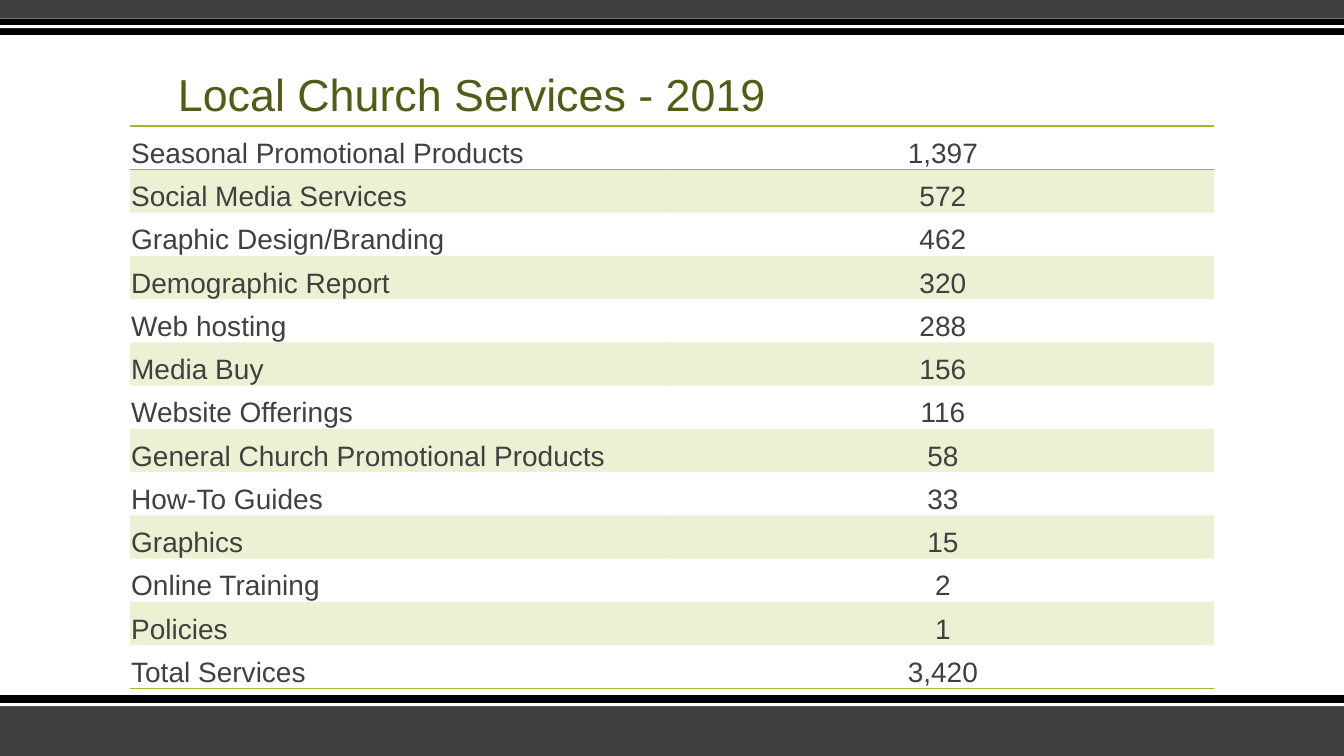
from dataclasses import dataclass

from lxml.etree import SubElement
from pptx import Presentation
from pptx.dml.color import RGBColor
from pptx.enum.shapes import MSO_SHAPE
from pptx.enum.text import MSO_ANCHOR, PP_ALIGN
from pptx.oxml.ns import qn
from pptx.util import Pt

TITLE = "Local Church Services - 2019"
SERVICES = [
    ("Seasonal Promotional Products", "1,397"),
    ("Social Media Services", "572"),
    ("Graphic Design/Branding", "462"),
    ("Demographic Report", "320"),
    ("Web hosting", "288"),
    ("Media Buy", "156"),
    ("Website Offerings", "116"),
    ("General Church Promotional Products", "58"),
    ("How-To Guides", "33"),
    ("Graphics", "15"),
    ("Online Training", "2"),
    ("Policies", "1"),
    ("Total Services", "3,420"),
]


@dataclass(frozen=True)
class Theme:
    font: str = "Arial"
    title_size: int = 32
    body_size: int = 20
    title: str = "535C14"
    body: str = "404040"
    accent: str = "A6B727"
    gray: str = "404040"
    black: str = "000000"
    white: str = "FFFFFF"


THEME = Theme()
WIDTH, HEIGHT = 960, 540
# top, height, colour, from back to front
BANDS = [
    (504, 36, THEME.gray),
    (496.5, 7.8, THEME.black),
    (502.3, 2.2, THEME.white),
    (0, 13.4, THEME.gray),
    (13.4, 11.6, THEME.black),
    (18, 2.2, THEME.white),
]
TABLE_LEFT, TABLE_TOP = 93, 90
COLUMN_WIDTH, ROW_HEIGHT = 387, 30.92
NO_STYLE = "{2D5ABB26-0587-4C30-8999-92F81FD0307C}"


def set_font(paragraph, size, color):
    for run in paragraph.runs:
        run.font.name = THEME.font
        run.font.size = Pt(size)
        run.font.color.rgb = RGBColor.from_string(color)


def add_band(slide, top, height, color):
    band = slide.shapes.add_shape(
        MSO_SHAPE.RECTANGLE, Pt(0), Pt(top), Pt(WIDTH), Pt(height))
    band.shadow.inherit = False
    band.fill.solid()
    band.fill.fore_color.rgb = RGBColor.from_string(color)
    band.line.fill.background()


def add_title(slide):
    box = slide.shapes.add_textbox(Pt(120), Pt(30), Pt(720), Pt(60))
    frame = box.text_frame
    frame.word_wrap = True
    frame.vertical_anchor = MSO_ANCHOR.BOTTOM
    frame.text = TITLE
    heading = frame.paragraphs[0]
    heading.line_spacing = 0.9
    set_font(heading, THEME.title_size, THEME.title)


def add_color(parent, color):
    fill = SubElement(parent, qn("a:solidFill"))
    return SubElement(fill, qn("a:srgbClr"), val=color)


def style_cell(cell, column, rules, banded):
    """Format one cell; rules lists its ruled sides, top before bottom."""
    cell.vertical_anchor = MSO_ANCHOR.BOTTOM
    cell.margin_left = cell.margin_right = cell.margin_top = Pt(0.7)
    cell.margin_bottom = Pt(0)
    entry = cell.text_frame.paragraphs[0]
    entry.alignment = PP_ALIGN.CENTER if column else PP_ALIGN.LEFT
    set_font(entry, THEME.body_size, THEME.body)
    properties = cell._tc.get_or_add_tcPr()
    for side in rules:
        rule = SubElement(properties, qn(f"a:{side}"), w=str(Pt(1)))
        add_color(rule, THEME.accent)
    if banded:
        tint = add_color(properties, THEME.accent)
        SubElement(tint, qn("a:alpha"), val="20000")
    else:
        cell.fill.background()


def add_services(slide):
    count = len(SERVICES)
    frame = slide.shapes.add_table(
        count, 2, Pt(TABLE_LEFT), Pt(TABLE_TOP),
        Pt(2 * COLUMN_WIDTH), Pt(count * ROW_HEIGHT))
    table = frame.table
    table.first_row = table.horz_banding = False
    table._tbl.tblPr.find(qn("a:tableStyleId")).text = NO_STYLE
    ruled = {0: ("lnT", "lnB"), count - 1: ("lnB",)}
    for row, service in enumerate(SERVICES):
        table.rows[row].height = Pt(ROW_HEIGHT)
        for column, value in enumerate(service):
            cell = table.cell(row, column)
            cell.text_frame.text = value
            style_cell(cell, column, ruled.get(row, ()), row % 2 == 1)


def main():
    deck = Presentation()
    deck.slide_width, deck.slide_height = Pt(WIDTH), Pt(HEIGHT)
    slide = deck.slides.add_slide(deck.slide_layouts[6])
    for band in BANDS:
        add_band(slide, *band)
    add_title(slide)
    add_services(slide)
    deck.save("out.pptx")


if __name__ == "__main__":
    main()
